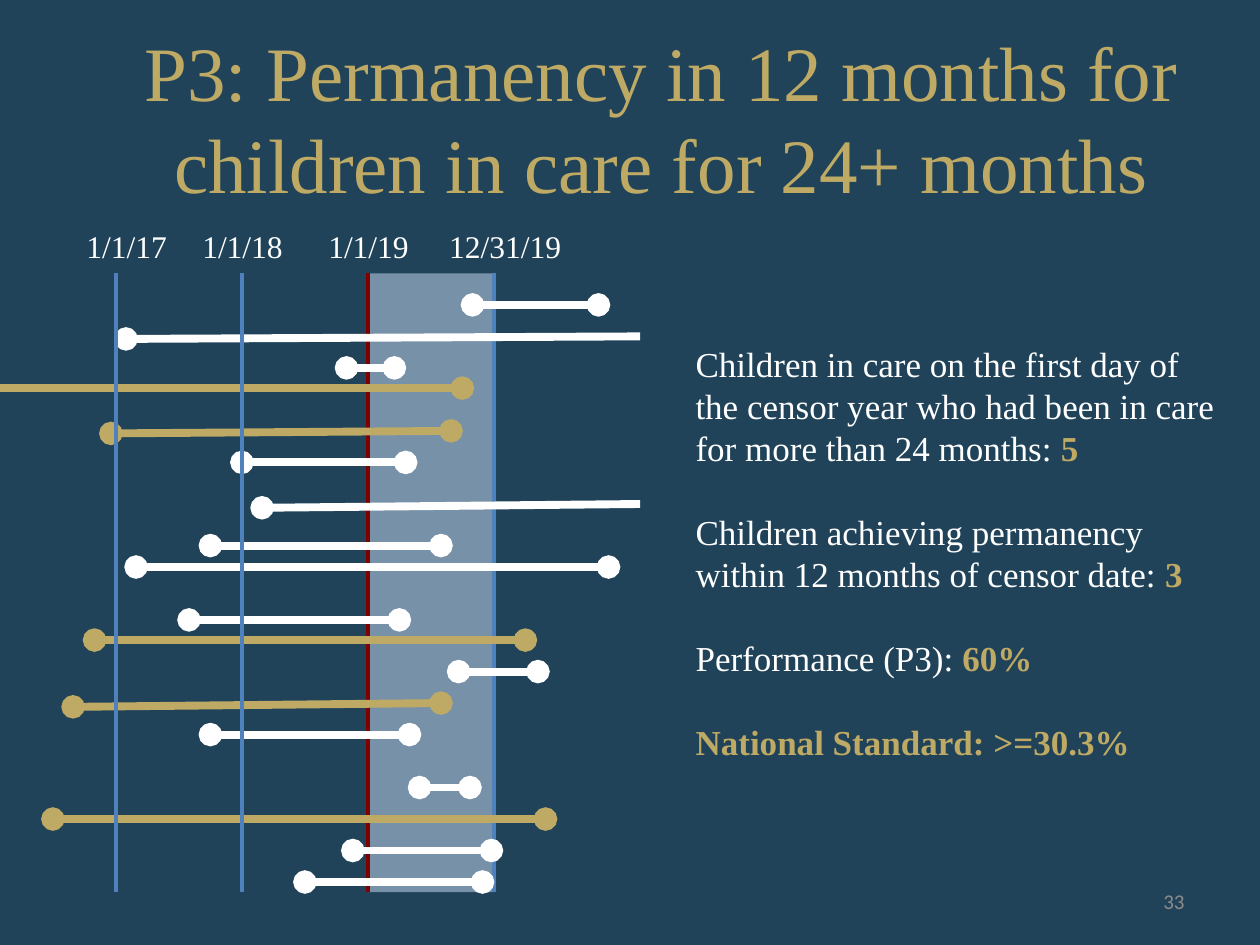
import pptx
import pptx.dml.color
import pptx.enum.shapes
import pptx.enum.text
import pptx.oxml
import pptx.oxml.ns
import pptx.util

Inches = pptx.util.Inches
Pt = pptx.util.Pt
Align = pptx.enum.text.PP_ALIGN
Anchor = pptx.enum.text.MSO_ANCHOR

GOLD = "BEAA64"
WHITE = "FFFFFF"
BLUE = "4F81BD"
DARK_RED = "800000"
SERIF = "Times New Roman"
TOP, BOTTOM = 2.17, 7.08

DATES = [
    ("1/1/17", 0.58, 0.85),
    ("1/1/18", 1.5, 0.85),
    ("1/1/19", 2.5, 0.85),
    ("12/31/19", 3.46, 1.1),
]

EPISODES = [
    (3.75, 2.42, 4.75, 2.42, WHITE, "both"),
    (1, 2.69, 5.08, 2.67, WHITE, "start"),
    (2.75, 2.92, 3.13, 2.92, WHITE, "both"),
    (0, 3.08, 3.67, 3.08, GOLD, "end"),
    (0.88, 3.44, 3.58, 3.42, GOLD, "both"),
    (1.92, 3.67, 3.22, 3.67, WHITE, "both"),
    (2.08, 4.03, 5.08, 4, WHITE, "start"),
    (1.67, 4.33, 3.5, 4.33, WHITE, "both"),
    (1.08, 4.5, 4.83, 4.5, WHITE, "both"),
    (1.5, 4.92, 3.17, 4.92, WHITE, "both"),
    (0.75, 5.08, 4.17, 5.08, GOLD, "both"),
    (3.64, 5.33, 4.27, 5.33, WHITE, "both"),
    (0.58, 5.61, 3.5, 5.58, GOLD, "both"),
    (1.67, 5.83, 3.25, 5.83, WHITE, "both"),
    (3.33, 6.25, 3.73, 6.25, WHITE, "both"),
    (0.42, 6.5, 4.33, 6.5, GOLD, "both"),
    (2.8, 6.75, 3.9, 6.75, WHITE, "both"),
    (2.42, 7, 3.83, 7, WHITE, "both"),
]

FINDINGS = [
    ("Children in care on the first day of the censor year "
     "who had been in care for more than 24 months: ", "5"),
    ("Children achieving permanency within 12 months of censor date: ", "3"),
    ("Performance (P3): ", "60%"),
    ("", "National Standard: >=30.3%"),
]


def color(value):
    return pptx.dml.color.RGBColor.from_string(value)


def apply_format(target, values):
    for name, value in values.items():
        setattr(target, name, value)


def place(shape, left, top, width, height):
    apply_format(shape, {"left": Inches(left), "top": Inches(top),
                         "width": Inches(width), "height": Inches(height)})


def add_run(paragraph, text, size, fill, font=SERIF, bold=False):
    run = paragraph.add_run()
    run.text = text
    apply_format(run.font, {"size": Pt(size), "name": font, "bold": bold})
    run.font.color.rgb = color(fill)


def add_child(parent, tag, **attributes):
    child = pptx.oxml.parse_xml(f"<a:{tag} {pptx.oxml.ns.nsdecls('a')}/>")
    for name, value in attributes.items():
        child.set(name, value)
    parent.append(child)


def add_line(slide, start, end, fill, width, dots=""):
    connector = slide.shapes.add_connector(
        pptx.enum.shapes.MSO_CONNECTOR.STRAIGHT, *map(Inches, start + end))
    connector.line.color.rgb = color(fill)
    connector.line.width = Pt(width)
    outline = connector.line._get_or_add_ln()
    if dots in ("both", "start"):
        add_child(outline, "headEnd", type="oval")
    if dots in ("both", "end"):
        add_child(outline, "tailEnd", type="oval")
    add_child(connector._element.spPr, "effectLst")


def add_date_line(slide, x, fill):
    add_line(slide, (x, TOP), (x, BOTTOM), fill, 2)


def add_label(slide, box, text, frame_format, alignment, size, fill, font=SERIF):
    label = slide.shapes.add_textbox(*map(Inches, box))
    apply_format(label.text_frame, frame_format)
    paragraph = label.text_frame.paragraphs[0]
    paragraph.alignment = alignment
    add_run(paragraph, text, size, fill, font)


def add_censor_year(slide):
    band = slide.shapes.add_shape(
        pptx.enum.shapes.MSO_SHAPE.RECTANGLE,
        Inches(2.92), Inches(TOP), Inches(1), Inches(BOTTOM - TOP))
    band.shadow.inherit = False
    band.line.fill.background()
    band.fill.solid()
    band.fill.fore_color.rgb = color("B9CDE5")
    add_child(band.fill._xPr.solidFill[0], "alpha", val="57000")


def fill_title(title):
    place(title, 0.5, 0.3, 9, 1.25)
    apply_format(title.text_frame, {
        "vertical_anchor": Anchor.MIDDLE, "word_wrap": True,
        "auto_size": pptx.enum.text.MSO_AUTO_SIZE.NONE})
    paragraph = title.text_frame.paragraphs[0]
    paragraph.alignment = Align.CENTER
    paragraph._p.get_or_add_pPr().set("marL", str(Inches(0.5)))
    add_run(paragraph,
            "P3: Permanency in 12 months for children in care for 24+ months",
            44, GOLD)


def fill_findings(body):
    place(body, 5.42, 2.67, 4.42, 3.47)
    frame = body.text_frame
    apply_format(frame, {
        "vertical_anchor": Anchor.TOP, "word_wrap": True,
        "auto_size": pptx.enum.text.MSO_AUTO_SIZE.NONE})
    for index, (statement, result) in enumerate(FINDINGS):
        paragraph = frame.add_paragraph() if index else frame.paragraphs[0]
        apply_format(paragraph, {"alignment": Align.LEFT,
                                 "space_before": Pt(24 if index else 0)})
        properties = paragraph._p.get_or_add_pPr()
        properties.set("marL", "0")
        properties.set("indent", "0")
        add_child(properties, "buNone")
        if statement:
            add_run(paragraph, statement, 20, WHITE)
        add_run(paragraph, result, 20, GOLD, bold=True)


def main():
    presentation = pptx.Presentation()
    apply_format(presentation, {"slide_width": Inches(10),
                                "slide_height": Inches(7.5)})
    slide = presentation.slides.add_slide(presentation.slide_layouts[1])
    slide.background.fill.solid()
    slide.background.fill.fore_color.rgb = color("204359")

    fill_title(slide.shapes.title)
    fill_findings(slide.placeholders[1])
    add_censor_year(slide)
    add_date_line(slide, 2.92, DARK_RED)
    add_date_line(slide, 3.92, BLUE)
    for x1, y1, x2, y2, fill, dots in EPISODES:
        add_line(slide, (x1, y1), (x2, y2), fill, 4.5, dots)
    for x in (0.92, 1.92):
        add_date_line(slide, x, BLUE)
    for text, left, width in DATES:
        add_label(slide, (left, 1.75, width, 0.4), text, {"word_wrap": False},
                  Align.CENTER, 18, WHITE)
    add_label(slide, (7.17, 6.95, 2.33, 0.4), "33",
              {"word_wrap": True, "vertical_anchor": Anchor.MIDDLE},
              Align.RIGHT, 12, "8C8C8C", "Calibri")
    presentation.save("out.pptx")


if __name__ == "__main__":
    main()
